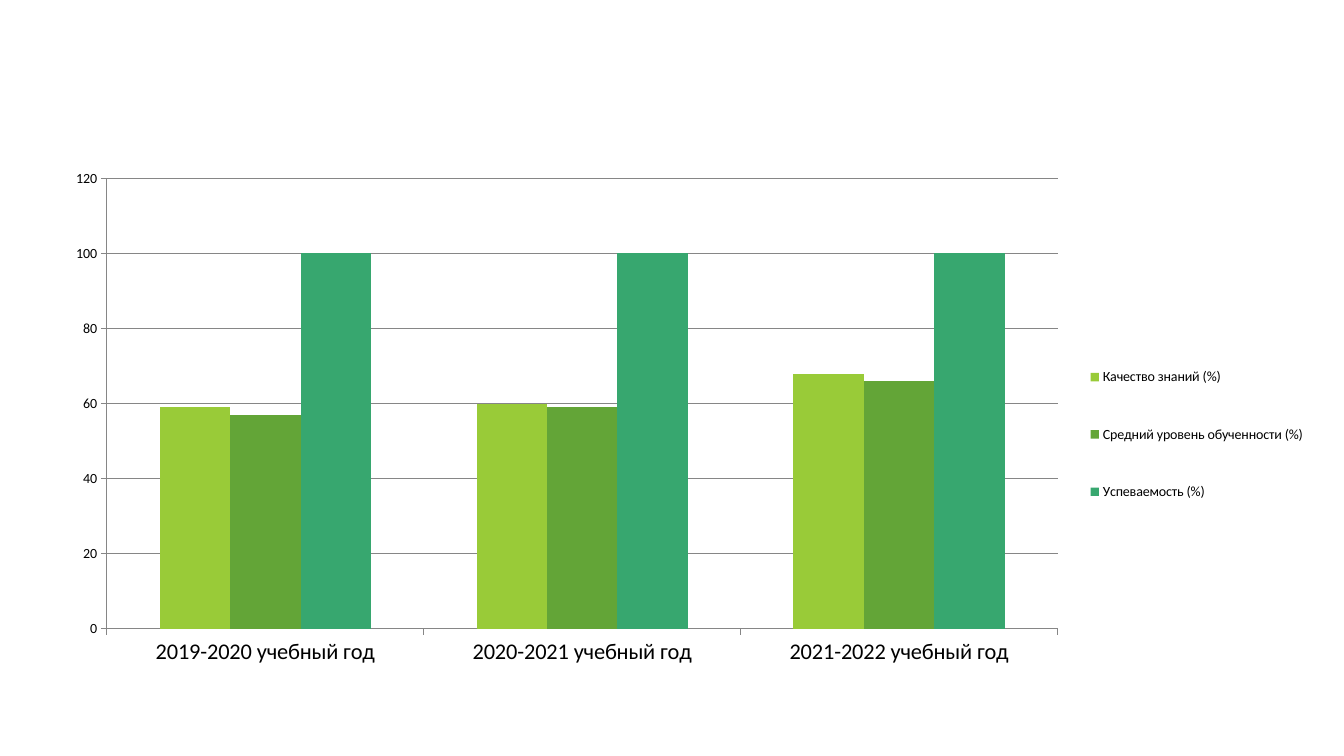
from pptx import Presentation
from pptx.chart.data import CategoryChartData
from pptx.dml.color import RGBColor
from pptx.enum.chart import XL_CHART_TYPE, XL_LEGEND_POSITION, XL_TICK_MARK
from pptx.oxml import parse_xml
from pptx.oxml.ns import nsdecls
from pptx.util import Inches, Pt

# Content
YEARS = ["2019-2020 учебный год", "2020-2021 учебный год", "2021-2022 учебный год"]
RESULTS = [
    ("Качество знаний (%)", (59, 60, 68), "99CB38"),
    ("Средний уровень обученности (%)", (57, 59, 66), "63A537"),
    ("Успеваемость (%)", (100, 100, 100), "37A76F"),
]
THEME = {"font": "Calibri", "text": "000000", "line": "868686",
         "size": Pt(10), "year_size": Pt(16), "line_width": Pt(0.75)}

# Placement in inches: left, top, width, height
CHART = (0.51, 1.58, 12.51, 5.12)
PLOT = (1.06, 1.77, 9.43, 4.47)
LEGEND = (10.72, 3.25, 2.3, 2.12)


def style_line(line):
    line.color.rgb = RGBColor.from_string(THEME["line"])
    line.width = THEME["line_width"]


def layout(box, target=""):
    """Manual chart layout: the box as fractions of the chart frame."""
    left, top, width, height = CHART
    parts = {"x": (box[0] - left) / width, "y": (box[1] - top) / height,
             "w": box[2] / width, "h": box[3] / height}
    modes = "".join(f'<c:{k}Mode val="edge"/>' for k in "xy")
    values = "".join(f'<c:{k} val="{v:.4f}"/>' for k, v in parts.items())
    return parse_xml(f'<c:layout {nsdecls("c")}><c:manualLayout>{target}{modes}{values}'
                     '</c:manualLayout></c:layout>')


prs = Presentation()
prs.slide_width, prs.slide_height = Inches(13.33), Inches(7.5)
s = prs.slides.add_slide(prs.slide_layouts[6])

# Chart
data = CategoryChartData()
data.categories = YEARS
for name, values, _ in RESULTS:
    data.add_series(name, values)
chart = s.shapes.add_chart(XL_CHART_TYPE.COLUMN_CLUSTERED,
                           *map(Inches, CHART), data).chart
chart.has_title = False
chart.font.name = THEME["font"]
chart.font.size = THEME["size"]
chart.font.color.rgb = RGBColor.from_string(THEME["text"])

# Columns
plot = chart.plots[0]
plot.vary_by_categories = False
plot.gap_width, plot.overlap = 150, 0
for series, (_, _, color) in zip(plot.series, RESULTS):
    series.format.fill.solid()
    series.format.fill.fore_color.rgb = RGBColor.from_string(color)

# Axes
years, scale = chart.category_axis, chart.value_axis
for axis in (years, scale):
    axis.major_tick_mark = XL_TICK_MARK.OUTSIDE
    axis.minor_tick_mark = XL_TICK_MARK.NONE
    style_line(axis.format.line)
years.tick_labels.font.size = THEME["year_size"]
scale.minimum_scale, scale.maximum_scale, scale.major_unit = 0, 120, 20
scale.has_major_gridlines = True
style_line(scale.major_gridlines.format.line)

# Legend
chart.has_legend = True
legend = chart.legend
legend.position = XL_LEGEND_POSITION.RIGHT
legend.include_in_layout = False

# Manual layout of the plot and the legend
plot_area = chart.element.chart.plotArea
for old in plot_area.findall("{*}layout"):
    plot_area.remove(old)
plot_area.insert(0, layout(PLOT, '<c:layoutTarget val="inner"/>'))
legend_xml = chart.element.chart.find("{*}legend")
for old in legend_xml.findall("{*}layout"):
    legend_xml.remove(old)
legend_xml.find("{*}legendPos").addnext(layout(LEGEND))

prs.save("out.pptx")
